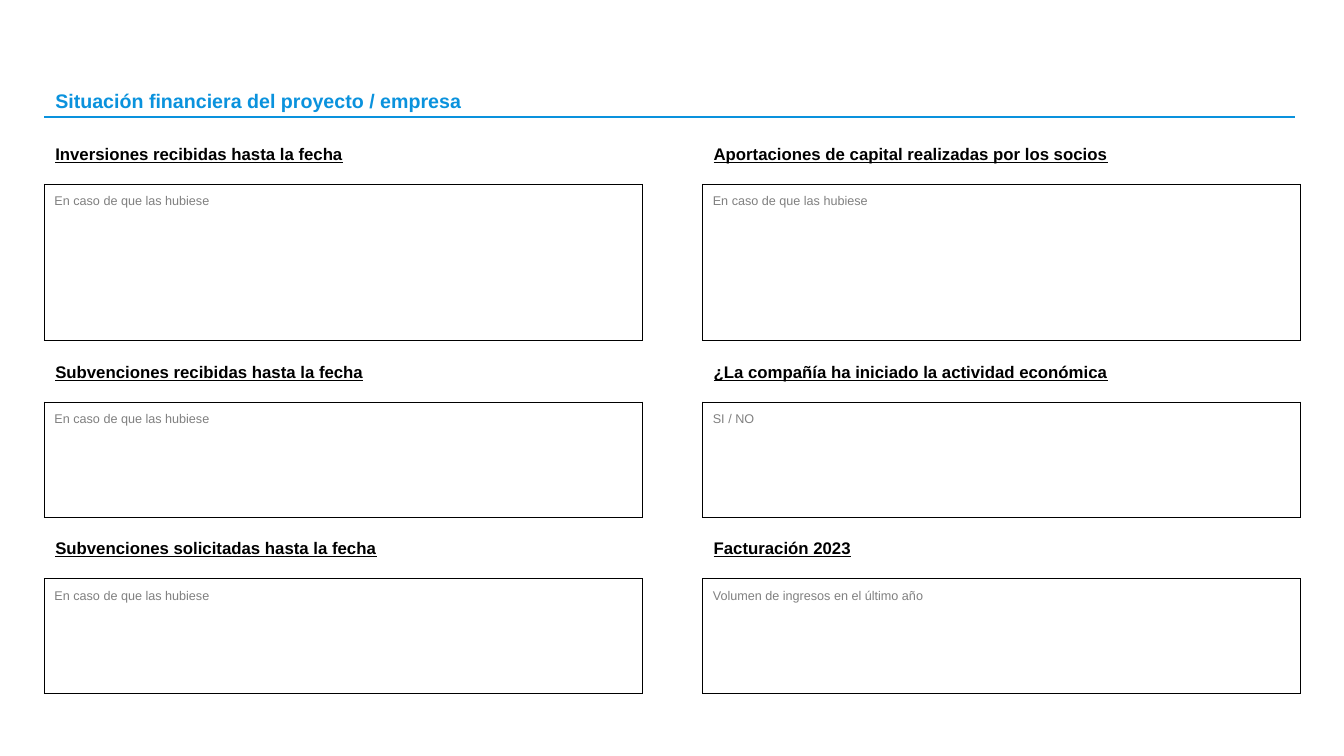
"""Build the slide on the financial situation of the project or company."""
from lxml import etree
from pptx import Presentation
from pptx.dml.color import RGBColor
from pptx.enum.shapes import MSO_CONNECTOR
from pptx.enum.text import MSO_ANCHOR
from pptx.oxml.ns import qn
from pptx.util import Inches, Pt

STRAIGHT = MSO_CONNECTOR.STRAIGHT
MIDDLE = MSO_ANCHOR.MIDDLE

TITLE = "Situación financiera del proyecto / empresa"
IF_ANY = "En caso de que las hubiese"
COLUMNS = [
    [
        ("Inversiones recibidas hasta la fecha", IF_ANY),
        ("Subvenciones recibidas hasta la fecha", IF_ANY),
        ("Subvenciones solicitadas hasta la fecha", IF_ANY),
    ],
    [
        ("Aportaciones de capital realizadas por los socios", IF_ANY),
        ("¿La compañía ha iniciado la actividad económica", "SI / NO"),
        ("Facturación 2023", "Volumen de ingresos en el último año"),
    ],
]
BLUE, BLACK, GREY, WHITE = "0A92DD", "000000", "808080", "FFFFFF"
FONT = "Arial"

SLIDE_W, SLIDE_H = 13.33, 7.5
LEFT, COLUMN_W, GUTTER = 0.44, 5.93, 0.6
RULE_Y, RULE_RIGHT = 1.16, 12.84
TEXT_SHIFT, TEXT_H = 0.01, 0.27
TITLE_Y, FIRST_BOX_Y = 0.86, 1.83
BOX_HEIGHTS = [1.55, 1.14, 1.14]
BOX_GAP, HEADING_RISE = 0.61, 0.44
CELL_MARGIN = 0.1


def color(value):
    return RGBColor.from_string(value)


def add_run(p, text, size, hue, bold=False, underline=False):
    r = p.add_run()
    r.text = text
    r.font.name, r.font.size = FONT, Pt(size)
    r.font.color.rgb = color(hue)
    r.font.bold, r.font.underline = bold, underline


def add_heading(s, x, y, text, size, hue, underline):
    box = s.shapes.add_textbox(
        Inches(x + TEXT_SHIFT), Inches(y), Inches(COLUMN_W), Inches(TEXT_H))
    tf = box.text_frame
    tf.word_wrap = True
    tf.vertical_anchor = MIDDLE
    add_run(tf.paragraphs[0], text, size, hue, True, underline)


def add_borders(cell):
    props = cell._tc.get_or_add_tcPr()
    for i, side in enumerate(("a:lnL", "a:lnR", "a:lnT", "a:lnB")):
        ln = etree.Element(qn(side), w=str(Pt(1)))
        fill = etree.SubElement(ln, qn("a:solidFill"))
        etree.SubElement(fill, qn("a:srgbClr"), val=BLACK)
        props.insert(i, ln)


def add_answer_box(s, x, y, height, hint):
    table = s.shapes.add_table(
        1, 1, Inches(x), Inches(y), Inches(COLUMN_W), Inches(height)).table
    table.first_row = table.horz_banding = False
    cell = table.cell(0, 0)
    cell.fill.solid()
    cell.fill.fore_color.rgb = color(WHITE)
    cell.margin_left = cell.margin_right = Inches(CELL_MARGIN)
    cell.margin_top = cell.margin_bottom = Inches(CELL_MARGIN)
    add_borders(cell)
    add_run(cell.text_frame.paragraphs[0], hint, 9, GREY)


def add_rule(s):
    rule = s.shapes.add_connector(
        STRAIGHT, Inches(LEFT), Inches(RULE_Y), Inches(RULE_RIGHT), Inches(RULE_Y))
    rule.line.color.rgb = color(BLUE)
    rule.line.width = Pt(1.5)
    etree.SubElement(rule._element.spPr, qn("a:effectLst"))


def main():
    prs = Presentation()
    prs.slide_width, prs.slide_height = Inches(SLIDE_W), Inches(SLIDE_H)
    s = prs.slides.add_slide(prs.slide_layouts[6])
    add_heading(s, LEFT, TITLE_Y, TITLE, 14, BLUE, False)
    add_rule(s)
    for i, sections in enumerate(COLUMNS):
        x = LEFT + i * (COLUMN_W + GUTTER)
        y = FIRST_BOX_Y
        for (heading, hint), height in zip(sections, BOX_HEIGHTS):
            add_heading(s, x, y - HEADING_RISE, heading, 12, BLACK, True)
            add_answer_box(s, x, y, height, hint)
            y += height + BOX_GAP
    prs.save("out.pptx")


if __name__ == "__main__":
    main()
